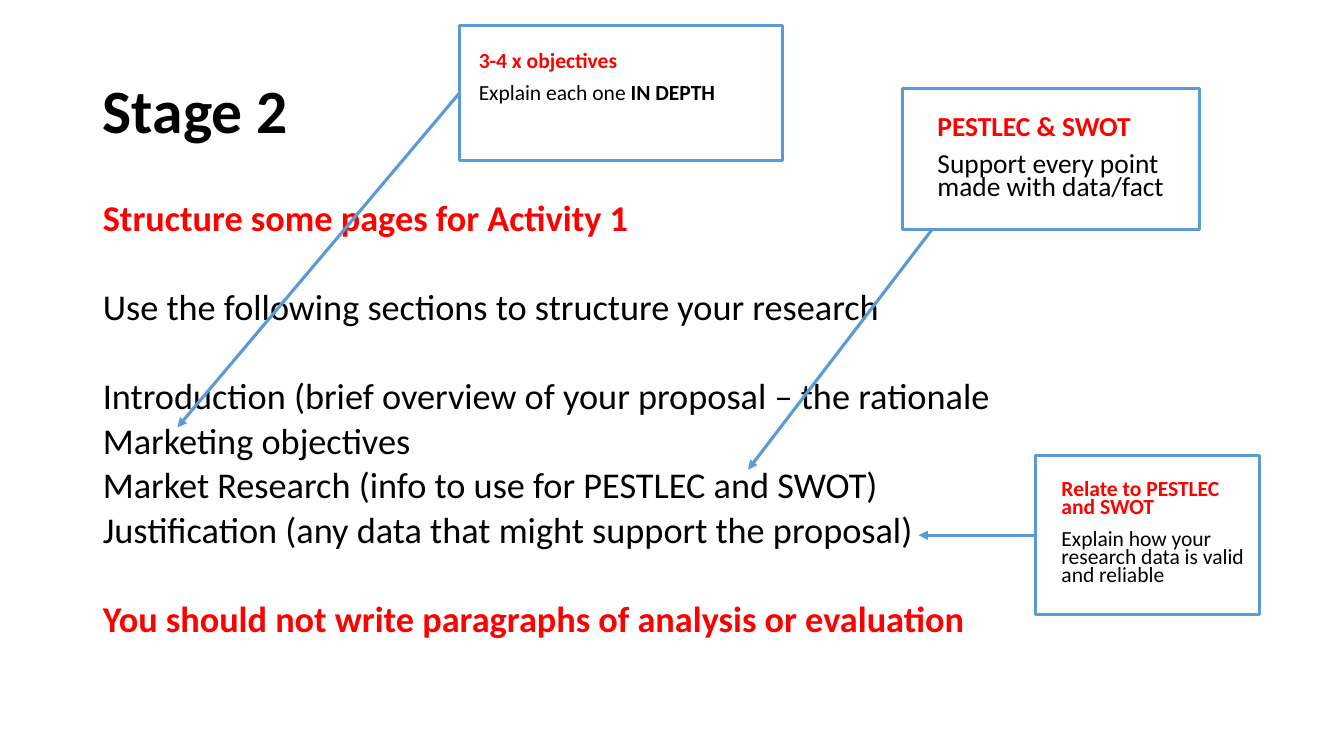
from lxml import etree
from pptx import Presentation
from pptx.dml.color import RGBColor
from pptx.enum.shapes import MSO_CONNECTOR, MSO_SHAPE
from pptx.enum.text import MSO_ANCHOR, MSO_AUTO_SIZE, PP_ALIGN
from pptx.oxml.ns import qn
from pptx.util import Pt

PX = 9144
FONT = "Calibri"
BLACK = RGBColor(0x00, 0x00, 0x00)
RED = RGBColor(0xFF, 0x00, 0x00)
BLUE = RGBColor(0x5B, 0x9B, 0xD5)
LEFT = PP_ALIGN.LEFT
TOP = MSO_ANCHOR.TOP
MIDDLE = MSO_ANCHOR.MIDDLE
NO_FIT = MSO_AUTO_SIZE.NONE
RECTANGLE = MSO_SHAPE.RECTANGLE
STRAIGHT = MSO_CONNECTOR.STRAIGHT
LINE_WIDTH = Pt(2.25)
TIGHT = 0.7
PARA_GAP = 10
SECTION_GAP = 42

SECTIONS = [
    (0, "Structure some pages for Activity 1", RED),
    (SECTION_GAP, "Use the following sections to structure your research", BLACK),
    (SECTION_GAP, "Introduction (brief overview of your proposal – the rationale", BLACK),
    (PARA_GAP, "Marketing objectives", BLACK),
    (PARA_GAP, "Market Research (info to use for PESTLEC and SWOT)", BLACK),
    (PARA_GAP, "Justification (any data that might support the proposal)", BLACK),
    (SECTION_GAP, "You should not write paragraphs of analysis or evaluation", RED),
]

CALLOUTS = [
    {
        "frame": (895, 88, 295, 140), "text": (25, 24, 270, 97), "size": 19.6,
        "heading": "PESTLEC & SWOT",
        "advice": [("Support every point made with data/fact", False)],
        "arrow": (925, 227, 742, 466),
    },
    {
        "frame": (1027, 452, 222, 158), "text": (16, 21, 206, 118), "size": 15.4,
        "heading": "Relate to PESTLEC and SWOT",
        "advice": [("Explain how your research data is valid and reliable", False)],
        "arrow": (1027, 531, 911, 531),
    },
    {
        "frame": (456, 25, 320, 134), "text": (9, 24, 291, 71), "size": 15.4,
        "heading": "3-4 x objectives",
        "advice": [("Explain each one ", False), ("IN DEPTH", True)],
        "arrow": (456, 92, 176, 424),
    },
]


def to_emu(lengths):
    return [length * PX for length in lengths]


def place(shape, box):
    shape.left, shape.top, shape.width, shape.height = to_emu(box)


def prepare_frame(shape, anchor):
    frame = shape.text_frame
    frame.word_wrap = True
    frame.auto_size = NO_FIT
    frame.vertical_anchor = anchor
    return frame


def format_para(para, gap, spacing=TIGHT):
    para.alignment = LEFT
    para.line_spacing = spacing
    para.space_before = Pt(gap)
    para.space_after = Pt(0)


def add_span(para, text, size, color, bold):
    span = para.add_run()
    span.text = text
    span.font.name = FONT
    span.font.size = Pt(size)
    span.font.bold = bold
    span.font.color.rgb = color


def add_title(page, box):
    title = page.shapes.title
    place(title, box)
    para = prepare_frame(title, MIDDLE).paragraphs[0]
    format_para(para, 0, 0.9)
    add_span(para, "Stage 2", 44, BLACK, True)


def add_sections(page, box):
    body = page.placeholders[1]
    place(body, box)
    frame = prepare_frame(body, TOP)
    for index, (gap, text, color) in enumerate(SECTIONS):
        para = frame.add_paragraph() if index else frame.paragraphs[0]
        format_para(para, gap)
        properties = para._p.get_or_add_pPr()
        properties.set("marL", "0")
        properties.set("indent", "0")
        etree.SubElement(properties, qn("a:buNone"))
        add_span(para, text, 25.9, color, color == RED)


def add_arrow(page, ends):
    arrow = page.shapes.add_connector(STRAIGHT, *to_emu(ends))
    arrow.line.color.rgb = BLUE
    arrow.line.width = LINE_WIDTH
    line = arrow.line._get_or_add_ln()
    etree.SubElement(line, qn("a:tailEnd"), type="triangle")
    etree.SubElement(arrow._element.spPr, qn("a:effectLst"))


def add_callout(page, callout):
    left, top, width, height = callout["frame"]
    inset_x, inset_y, text_width, text_height = callout["text"]
    size = callout["size"]

    note = page.shapes.add_textbox(
        *to_emu((left + inset_x, top + inset_y, text_width, text_height)))
    frame = prepare_frame(note, TOP)
    heading = frame.paragraphs[0]
    format_para(heading, 0)
    add_span(heading, callout["heading"], size, RED, True)
    advice = frame.add_paragraph()
    format_para(advice, PARA_GAP)
    for text, bold in callout["advice"]:
        add_span(advice, text, size, BLACK, bold)

    add_arrow(page, callout["arrow"])

    border = page.shapes.add_shape(RECTANGLE, *to_emu((left, top, width, height)))
    border.shadow.inherit = False
    border.fill.background()
    border.line.color.rgb = BLUE
    border.line.width = LINE_WIDTH


def main():
    deck = Presentation()
    deck.slide_width, deck.slide_height = to_emu((1333, 750))
    page = deck.slides.add_slide(deck.slide_layouts[1])
    add_title(page, (92, 40, 1150, 145))
    add_sections(page, (92, 200, 1150, 476))
    for callout in CALLOUTS:
        add_callout(page, callout)
    deck.save("out.pptx")


if __name__ == "__main__":
    main()
